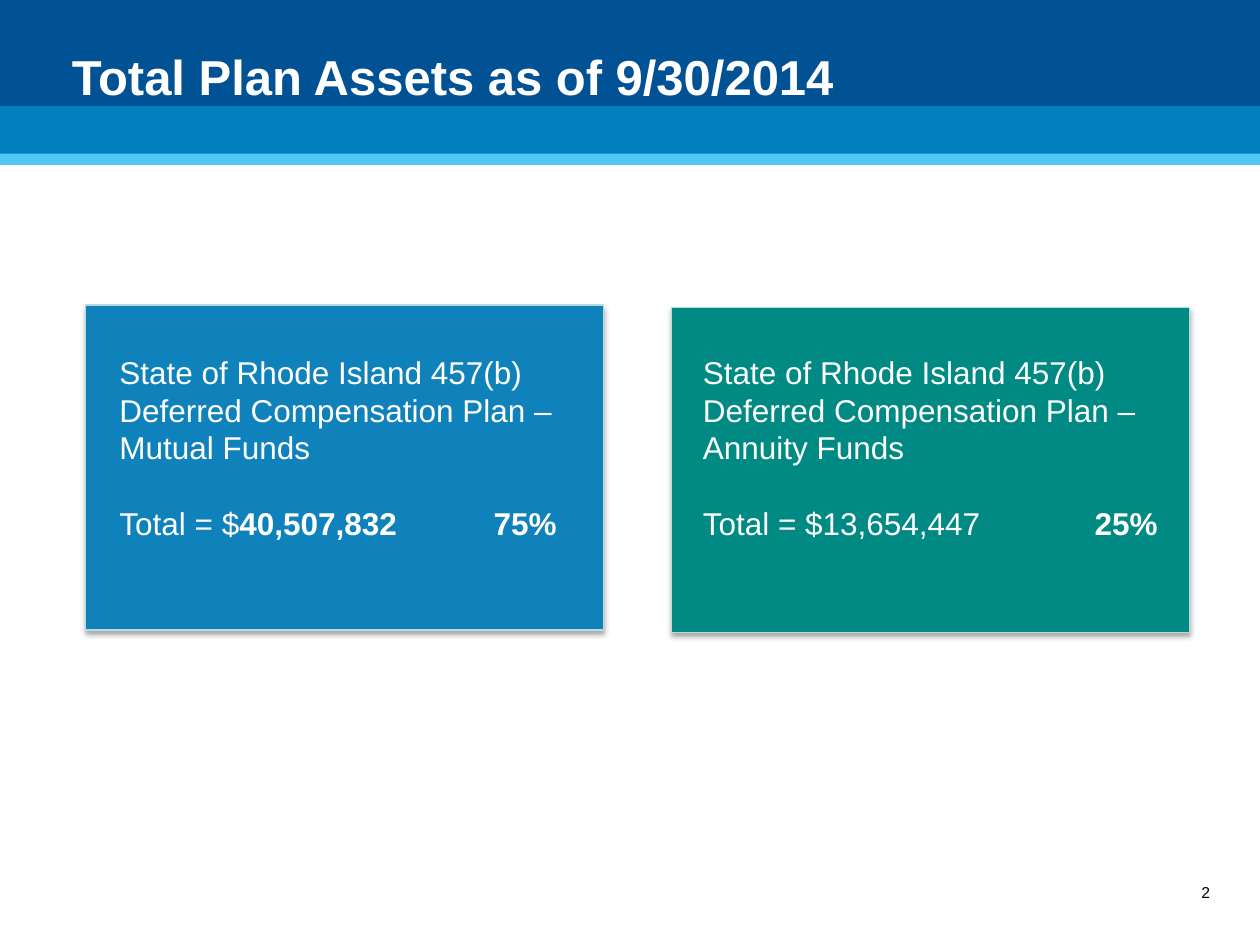
from lxml import etree
from pptx import Presentation
from pptx.dml.color import RGBColor
from pptx.enum.shapes import MSO_SHAPE
from pptx.enum.text import MSO_ANCHOR, PP_ALIGN
from pptx.oxml.ns import qn
from pptx.util import Inches, Pt

RECTANGLE = MSO_SHAPE.RECTANGLE
MIDDLE = MSO_ANCHOR.MIDDLE
LEFT, CENTER = PP_ALIGN.LEFT, PP_ALIGN.CENTER
FONT = "Arial"
COLORS = {
    "navy": "005295", "blue": "0180BF", "sky": "50C8F3",
    "mutual": "1082BB", "annuity": "008A83", "border": "B6DCDF",
    "white": "FFFFFF", "black": "000000",
}


def color(name):
    """Return the named colour."""
    return RGBColor.from_string(COLORS[name])


def set_font(para, size, name, bold=None):
    """Format a whole paragraph."""
    font = para.font
    font.name, font.size, font.bold = FONT, Pt(size), bold
    font.color.rgb = color(name)


def add_rectangle(page, box, fill):
    """Add a plain filled rectangle without line or shadow."""
    shape = page.shapes.add_shape(RECTANGLE, *map(Inches, box))
    shape.shadow.inherit = False
    shape.fill.solid()
    shape.fill.fore_color.rgb = color(fill)
    shape.line.fill.background()
    return shape


def add_header(page, box, text):
    """Stack the header bands and lay the title over them."""
    left, top, width, _ = box
    for fill, offset, height in (("sky", 1.2, 0.11), ("navy", 0, 0.84), ("blue", 0.84, 0.38)):
        add_rectangle(page, (left, top + offset, width, height), fill)
    title = page.shapes.title
    title.left, title.top = Inches(left + 0.47), Inches(top - 0.02)
    title.width, title.height = Inches(9), Inches(1.25)
    frame = title.text_frame
    frame.text = text
    frame.vertical_anchor = MIDDLE
    para = frame.paragraphs[0]
    para.alignment = LEFT
    set_font(para, 28, "white", True)
    page.shapes._spTree.append(title._element)


def add_card(page, box, fill):
    """Add a bordered card with a soft shadow below it."""
    card = add_rectangle(page, box, fill)
    card.line.color.rgb = color("border")
    card.line.width = Pt(0.75)
    effects = card._element.spPr.find(qn("a:effectLst"))
    shadow = etree.SubElement(effects, qn("a:outerShdw"), blurRad=str(Pt(3.1)),
                              dist=str(Pt(1.8)), dir="5400000", rotWithShape="0")
    tint = etree.SubElement(shadow, qn("a:srgbClr"), val=COLORS["black"])
    etree.SubElement(tint, qn("a:alpha"), val="35000")


def add_plan(page, box, fund, amount, share, tab, bold_amount):
    """Write the plan name, its total and its share at a tab stop."""
    frame = page.shapes.add_textbox(*map(Inches, box)).text_frame
    frame.word_wrap = True
    name = frame.paragraphs[0]
    name.text = f"State of Rhode Island 457(b) Deferred Compensation Plan – {fund}"
    total = frame.add_paragraph()
    for text, bold in (("Total = $", False), (amount, bold_amount), (f"\t{share}", True)):
        span = total.add_run()
        span.text = text
        span.font.bold = bold
    for para in (name, total):
        set_font(para, 18, "white")
        para.line_spacing = Pt(21.6)
    total.space_before = Pt(21.6)
    tabs = etree.SubElement(total._p.get_or_add_pPr(), qn("a:tabLst"))
    etree.SubElement(tabs, qn("a:tab"), pos=str(Inches(tab)), algn="l")
    properties = total._p.get_or_add_pPr()
    properties.insert(list(properties).index(properties.find(qn("a:defRPr"))), tabs)


def add_page_number(page, box, number):
    """Write the page number without margins."""
    frame = page.shapes.add_textbox(*map(Inches, box)).text_frame
    frame.margin_left = frame.margin_right = frame.margin_top = frame.margin_bottom = 0
    frame.word_wrap = True
    para = frame.paragraphs[0]
    para.text = number
    para.alignment = CENTER
    set_font(para, 9, "black")


def main():
    """Build and save the slide."""
    deck = Presentation()
    deck.slide_width, deck.slide_height = Inches(10), Inches(7.5)
    page = deck.slides.add_slide(deck.slide_layouts[5])
    add_header(page, (0, 0, 10, 1.31), "Total Plan Assets as of 9/30/2014")
    add_card(page, (0.68, 2.42, 4.11, 2.58), "mutual")
    add_card(page, (5.33, 2.44, 4.11, 2.58), "annuity")
    add_plan(page, (0.85, 2.75, 3.9, 2.19), "Mutual Funds", "40,507,832", "75%", 2.97, True)
    add_plan(page, (5.48, 2.75, 4.18, 2.28), "Annuity Funds", "13,654,447", "25%", 3.11, False)
    add_page_number(page, (9.33, 7.01, 0.48, 0.15), "2")
    deck.save("out.pptx")


if __name__ == "__main__":
    main()
